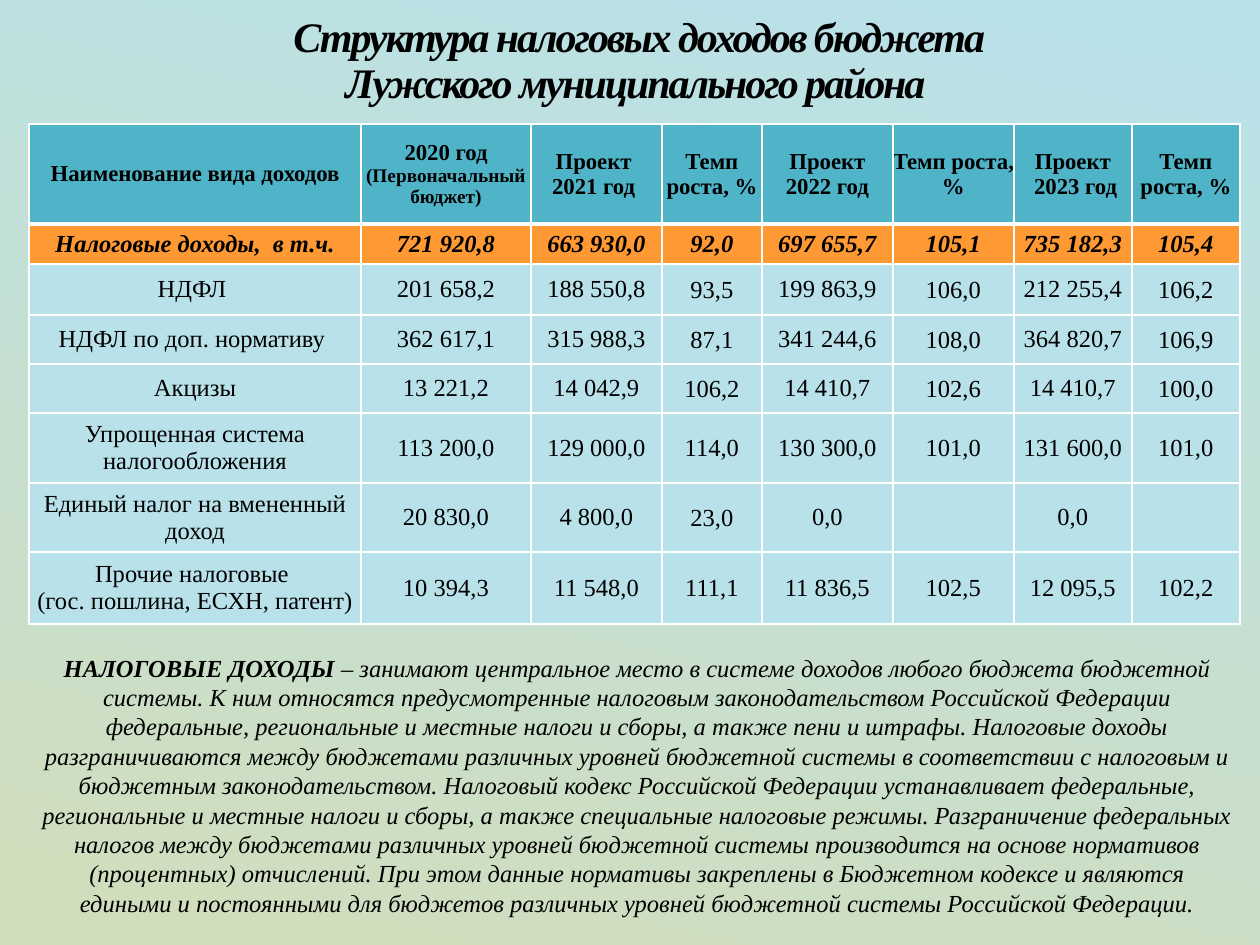
from dataclasses import dataclass

from lxml.etree import SubElement
from pptx import Presentation
from pptx.dml.color import RGBColor
from pptx.enum.shapes import MSO_SHAPE
from pptx.enum.text import MSO_ANCHOR as ANCHOR, PP_ALIGN as ALIGN
from pptx.oxml.ns import qn
from pptx.util import Emu, Pt

PX = 914400 // 126


@dataclass(frozen=True)
class Theme:
    """Colours and type sizes of the slide."""
    font: str = "Times New Roman"
    text: str = "000000"
    sky: str = "B9E1E9"
    meadow: str = "D1DEBC"
    header: str = "50B4C8"
    total: str = "FF9933"
    border: str = "FFFFFF"
    title_size: int = 24
    lead_size: int = 18
    body_size: int = 14
    header_size: int = 13
    note_size: int = 11
    thin: int = 1
    thick: int = 3


THEME = Theme()

COLUMNS = [332, 170, 131, 100, 131, 121, 118, 108]
ROWS = [100, 40, 51, 49, 49, 70, 69, 72]
GROWTH_COLUMNS = (3, 5, 7)
GROWTH = ["Темп роста, %"]
HEADER = [
    ["Наименование вида доходов"],
    ["2020 год "],
    ["Проект ", "2021 год "], GROWTH,
    ["Проект", "2022 год"], GROWTH,
    ["Проект", " 2023 год"], GROWTH,
]
HEADER_NOTE = "(Первоначальный бюджет)"
INCOME = [
    ["Налоговые доходы,  в т.ч.", "721 920,8", "663 930,0", "92,0",
     "697 655,7", "105,1", "735 182,3", "105,4"],
    ["НДФЛ ", "201 658,2", "188 550,8", "93,5",
     "199 863,9", "106,0", "212 255,4", "106,2"],
    ["НДФЛ по доп. нормативу ", "362 617,1", "315 988,3", "87,1",
     "341 244,6", "108,0", "364 820,7", "106,9"],
    ["Акцизы", "13 221,2", "14 042,9", "106,2",
     "14 410,7", "102,6", "14 410,7", "100,0"],
    ["Упрощенная система налогообложения", "113 200,0", "129 000,0", "114,0",
     "130 300,0", "101,0", "131 600,0", "101,0"],
    ["Единый налог на вмененный доход", "20 830,0", "4 800,0", "23,0",
     "0,0", "", "0,0", ""],
    ["Прочие налоговые \n(гос. пошлина, ЕСХН, патент)", "10 394,3", "11 548,0", "111,1",
     "11 836,5", "102,5", "12 095,5", "102,2"],
]
TITLE = ["Структура налоговых доходов бюджета ", "Лужского муниципального района "]
DEFINITION = [
    "занимают центральное место в системе доходов любого бюджета бюджетной системы.",
    "К ним относятся предусмотренные налоговым законодательством Российской Федерации "
    "федеральные, региональные и местные налоги и сборы, а также пени и штрафы.",
    "Налоговые доходы разграничиваются между бюджетами различных уровней бюджетной системы "
    "в соответствии с налоговым и бюджетным законодательством.",
    "Налоговый кодекс Российской Федерации устанавливает федеральные, региональные и местные "
    "налоги и сборы, а также специальные налоговые режимы.",
    "Разграничение федеральных налогов между бюджетами различных уровней бюджетной системы "
    "производится на основе нормативов (процентных) отчислений.",
    "При этом данные нормативы закреплены в Бюджетном кодексе и являются едиными и постоянными "
    "для бюджетов различных уровней бюджетной системы Российской Федерации.",
]


def px(*lengths):
    """Turn pixel lengths into EMU."""
    return [Emu(length * PX) for length in lengths]


def rgb(value):
    """Return the colour for a hex value."""
    return RGBColor.from_string(value)


def add_run(paragraph, text, size, bold=False, italic=False, spacing=None):
    """Add one formatted run to a paragraph."""
    run = paragraph.add_run()
    run.text = text
    font = run.font
    font.name, font.size, font.bold, font.italic = THEME.font, Pt(size), bold, italic
    font.color.rgb = rgb(THEME.text)
    if spacing is not None:
        run._r.get_or_add_rPr().set("spc", str(spacing))


def paint_background(slide):
    """Give the slide its slanted gradient."""
    fill = slide.background.fill
    fill.gradient()
    fill.gradient_angle = 258
    stops = ((0.02, THEME.sky), (1, THEME.meadow))
    for stop, (position, colour) in zip(fill.gradient_stops, stops):
        stop.position = position
        stop.color.rgb = rgb(colour)


def add_title(slide):
    """Add the two-line heading."""
    frame = slide.shapes.add_textbox(*px(39, 8, 1201, 108)).text_frame
    frame.word_wrap = True
    frame.vertical_anchor = ANCHOR.MIDDLE
    paragraph = frame.paragraphs[0]
    paragraph.alignment = ALIGN.CENTER
    paragraph.line_spacing = 0.9
    add_run(paragraph, " ", THEME.lead_size, True, spacing=-120)
    for index, line in enumerate(TITLE):
        if index:
            paragraph.add_line_break()
        add_run(paragraph, line, THEME.title_size, True, True, -120)


def set_borders(cell, top, bottom):
    """Draw the four borders of a cell."""
    properties = cell._tc.get_or_add_tcPr()
    widths = {"a:lnL": THEME.thin, "a:lnR": THEME.thin, "a:lnT": top, "a:lnB": bottom}
    for tag, width in widths.items():
        line = SubElement(properties, qn(tag), w=str(Pt(width)))
        SubElement(SubElement(line, qn("a:solidFill")), qn("a:srgbClr"), val=THEME.border)


def fill_cell(cell, lines, colour, size, bold=False, italic=False, inset=0):
    """Colour a cell and write its centred lines."""
    cell.fill.solid()
    cell.fill.fore_color.rgb = rgb(colour)
    cell.vertical_anchor = ANCHOR.MIDDLE
    cell.margin_left, cell.margin_top, cell.margin_right, cell.margin_bottom = px(
        inset, inset, inset, 0)
    frame = cell.text_frame
    for index, line in enumerate(lines):
        paragraph = frame.add_paragraph() if index else frame.paragraphs[0]
        paragraph.alignment = ALIGN.CENTER
        if line:
            add_run(paragraph, line, size, bold, italic)


def add_income_table(slide):
    """Add the table of tax income by year."""
    box = px(29, 124, sum(COLUMNS), sum(ROWS))
    table = slide.shapes.add_table(len(ROWS), len(COLUMNS), *box).table
    table.horz_banding = False
    for column, width in zip(table.columns, px(*COLUMNS)):
        column.width = width
    for row, height in zip(table.rows, px(*ROWS)):
        row.height = height
    for index, lines in enumerate(HEADER):
        cell = table.cell(0, index)
        set_borders(cell, THEME.thin, THEME.thick)
        fill_cell(cell, lines, THEME.header, THEME.header_size, True)
    add_run(table.cell(0, 1).text_frame.paragraphs[0], HEADER_NOTE, THEME.note_size, True)
    for row, values in enumerate(INCOME, start=1):
        total = row == 1
        for column, value in enumerate(values):
            cell = table.cell(row, column)
            set_borders(cell, THEME.thick if total else THEME.thin, THEME.thin)
            fill_cell(cell, value.split("\n"), THEME.total if total else THEME.sky,
                      THEME.body_size, total, total, int(column in GROWTH_COLUMNS))


def add_definition(slide):
    """Add the explanation of tax income below the table."""
    shape = slide.shapes.add_shape(MSO_SHAPE.ROUNDED_RECTANGLE, *px(15, 651, 1245, 268))
    shape.shadow.inherit = False
    shape.fill.background()
    shape.line.fill.background()
    frame = shape.text_frame
    frame.word_wrap = True
    frame.vertical_anchor = ANCHOR.MIDDLE
    paragraph = frame.paragraphs[0]
    paragraph.alignment = ALIGN.CENTER
    add_run(paragraph, "НАЛОГОВЫЕ ДОХОДЫ ", THEME.body_size, True, True)
    add_run(paragraph, "– ", THEME.body_size)
    add_run(paragraph, " ".join(DEFINITION), THEME.body_size, italic=True)


def main():
    """Build and save the slide."""
    presentation = Presentation()
    presentation.slide_width, presentation.slide_height = px(1260, 945)
    slide = presentation.slides.add_slide(presentation.slide_layouts[6])
    paint_background(slide)
    add_title(slide)
    add_income_table(slide)
    add_definition(slide)
    presentation.save("out.pptx")


if __name__ == "__main__":
    main()
